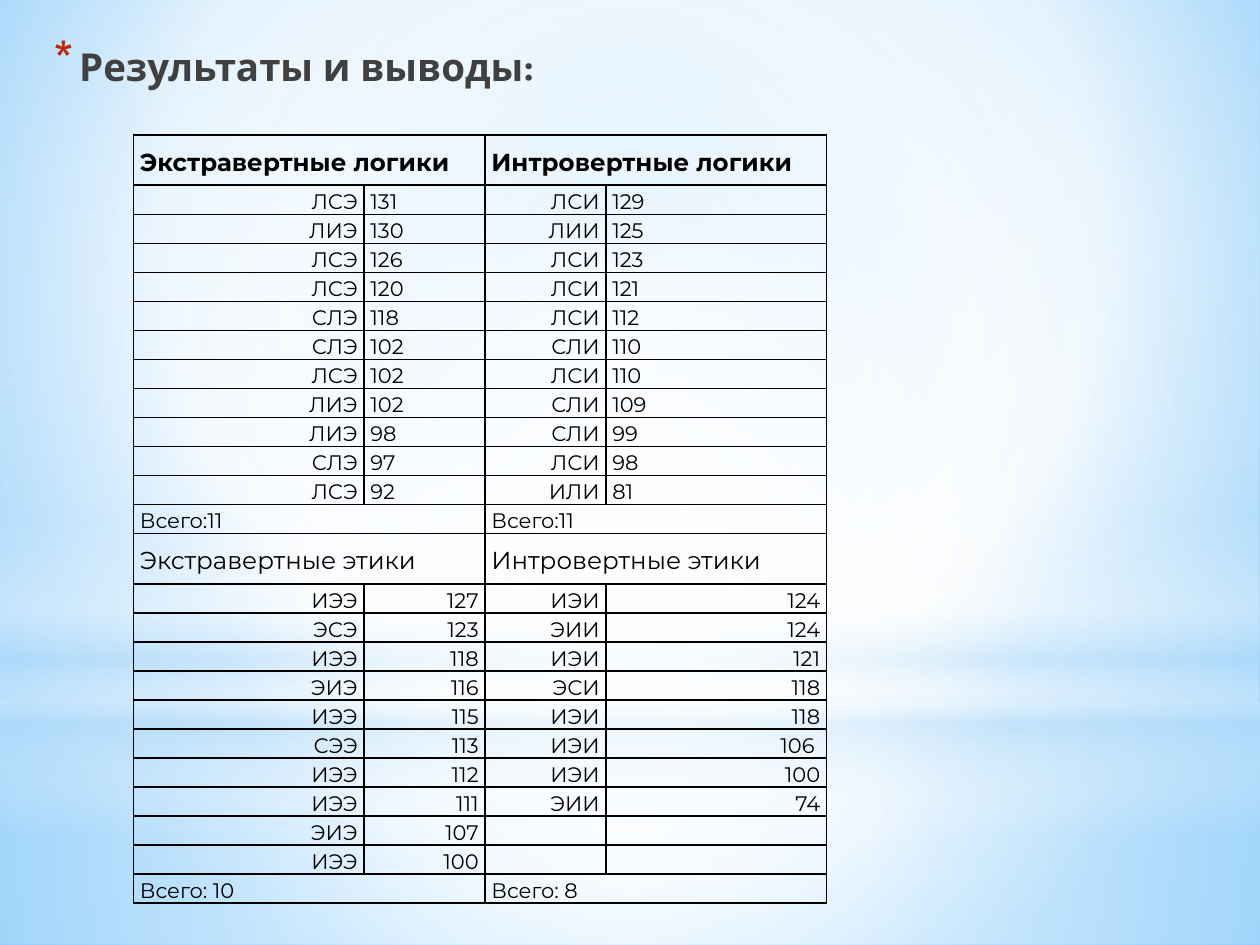
from lxml import etree
from pptx import Presentation
from pptx.dml.color import RGBColor
from pptx.enum.shapes import MSO_SHAPE
from pptx.enum.text import MSO_ANCHOR, PP_ALIGN
from pptx.oxml.ns import qn
from pptx.util import Inches, Pt

RECT, OVAL = MSO_SHAPE.RECTANGLE, MSO_SHAPE.OVAL
LEFT, RIGHT = PP_ALIGN.LEFT, PP_ALIGN.RIGHT
MIDDLE = MSO_ANCHOR.MIDDLE

BLACK = RGBColor(0x00, 0x00, 0x00)
GRAY = RGBColor(0x40, 0x40, 0x40)
RED = RGBColor(0xC3, 0x26, 0x0C)
WHITE = RGBColor(0xFF, 0xFF, 0xFF)
PALE = RGBColor(0xB4, 0xDC, 0xFA)
SKY = RGBColor(0x9E, 0xD5, 0xFF)
DEEP = RGBColor(0x5B, 0xB9, 0xFF)

# Content
TITLE = "Результаты и выводы:"
SECTIONS = [
    {
        "heads": ("Экстравертные логики", "Интровертные логики"),
        "bold": True,
        "number_align": LEFT,
        "rows": [
            ("ЛСЭ", "131", "ЛСИ", "129"), ("ЛИЭ", "130", "ЛИИ", "125"),
            ("ЛСЭ", "126", "ЛСИ", "123"), ("ЛСЭ", "120", "ЛСИ", "121"),
            ("СЛЭ", "118", "ЛСИ", "112"), ("СЛЭ", "102", "СЛИ", "110"),
            ("ЛСЭ", "102", "ЛСИ", "110"), ("ЛИЭ", "102", "СЛИ", "109"),
            ("ЛИЭ", "98", "СЛИ", "99"), ("СЛЭ", "97", "ЛСИ", "98"),
            ("ЛСЭ", "92", "ИЛИ", "81"),
        ],
        "totals": ("Всего:11", "Всего:11"),
    },
    {
        "heads": ("Экстравертные этики", "Интровертные этики"),
        "bold": False,
        "number_align": RIGHT,
        "rows": [
            ("ИЭЭ", "127", "ИЭИ", "124"), ("ЭСЭ", "123", "ЭИИ", "124"),
            ("ИЭЭ", "118", "ИЭИ", "121"), ("ЭИЭ", "116", "ЭСИ", "118"),
            ("ИЭЭ", "115", "ИЭИ", "118"), ("СЭЭ", "113", "ИЭИ", "106 "),
            ("ИЭЭ", "112", "ИЭИ", "100"), ("ИЭЭ", "111", "ЭИИ", "74"),
            ("ЭИЭ", "107", "", ""), ("ИЭЭ", "100", "", ""),
        ],
        "totals": ("Всего: 10", "Всего: 8"),
    },
]
COLUMNS = (1.83, 0.96, 0.96, 1.75)
HEAD_ROW, ROW = 0.4, 0.23

# Gradient stops: position, colour, opacity (all in percent)
CENTER = (50, 50, 50, 50)
BACKDROP = [(0, SKY, 100), (60, WHITE, 100), (100, DEEP, 100)]
LAYERS = [  # shape, top, height, stops, focus (None for a vertical gradient)
    (RECT, 5.58, 1.92, [(0, WHITE, 91), (37, WHITE, 76), (100, PALE, 79)], CENTER),
    (RECT, 0, 5.58, [(0, WHITE, 89), (48, WHITE, 62), (100, PALE, 79)], CENTER),
    (RECT, 4.12, 2.5, [(0, WHITE, 0), (29, WHITE, 30), (45, PALE, 40),
                       (55, WHITE, 26), (65, PALE, 60), (100, WHITE, 0)], None),
    (OVAL, 1.75, 5.58, [(0, WHITE, 100), (56, WHITE, 0)], CENTER),
]


def add(parent, tag, **attrs):
    return etree.SubElement(parent, qn(tag), {k: str(v) for k, v in attrs.items()})


def set_gradient(fill, owner, stops, focus):
    fill.gradient()
    grad = next(owner.iter(qn("a:gradFill")))
    for child in list(grad):
        grad.remove(child)
    stop_list = add(grad, "a:gsLst")
    for pos, color, opacity in stops:
        stop = add(stop_list, "a:gs", pos=pos * 1000)
        clr = add(stop, "a:srgbClr", val=color)
        if opacity < 100:
            add(clr, "a:alpha", val=opacity * 1000)
    if focus:
        sides = {side: pct * 1000 for side, pct in zip("ltrb", focus)}
        add(add(grad, "a:path", path="circle"), "a:fillToRect", **sides)
    else:
        add(grad, "a:lin", ang=90 * 60000, scaled=0)


def set_borders(cell):
    tc_pr = cell._tc.get_or_add_tcPr()
    for i, side in enumerate(("L", "R", "T", "B")):
        line = add(tc_pr, f"a:ln{side}", w=Pt(1))
        add(add(line, "a:solidFill"), "a:srgbClr", val=BLACK)
        tc_pr.insert(i, line)


def fill_cell(cell, text, align=LEFT, size=12, bold=False):
    cell.vertical_anchor = MIDDLE
    cell.margin_left = cell.margin_right = Inches(0.05)
    cell.margin_top = cell.margin_bottom = 0
    p = cell.text_frame.paragraphs[0]
    if text:
        p.add_run().text = text
    p.alignment, p.line_spacing = align, 1.15
    p.font.name, p.font.size, p.font.bold = "Montserrat", Pt(size), bold
    p.font.color.rgb = BLACK
    if not text:
        add(p._p, "a:endParaRPr", sz=size * 100)


def fill_pair(table, row, texts, **style):
    for col, text in zip((0, 2), texts):
        table.cell(row, col).merge(table.cell(row, col + 1))
        fill_cell(table.cell(row, col), text, **style)


prs = Presentation()
prs.slide_width, prs.slide_height = Inches(10), Inches(7.5)
s = prs.slides.add_slide(prs.slide_layouts[6])

# Background and its translucent layers
set_gradient(s.background.fill, s.element, BACKDROP, (20, 10, 20, 60))
for kind, top, height, stops, focus in LAYERS:
    sp = s.shapes.add_shape(kind, 0, Inches(top), prs.slide_width, Inches(height))
    sp.shadow.inherit = False
    sp.line.fill.background()
    set_gradient(sp.fill, sp.element, stops, focus)

# Bulleted title
tf = s.shapes.add_textbox(Inches(0.28), Inches(0.29), Inches(9.45), Inches(6.85)).text_frame
tf.word_wrap = True
p = tf.paragraphs[0]
p.text = TITLE
p.space_before, p.space_after = Pt(4.4), Pt(3)
p.font.name, p.font.size, p.font.bold = "Karla", Pt(22), True
p.font.color.rgb = GRAY
p_pr = p._p.get_or_add_pPr()
p_pr.set("marL", str(Inches(0.25)))
p_pr.set("indent", str(Inches(-0.2)))
bullet = [add(p_pr, "a:buClr"), add(p_pr, "a:buSzPct", val=130000),
          add(p_pr, "a:buChar", char="*")]
add(bullet[0], "a:srgbClr", val=RED)
p_pr.append(p_pr.find(qn("a:defRPr")))

# Results table
heights = [h for sec in SECTIONS for h in [HEAD_ROW] + [ROW] * (len(sec["rows"]) + 1)]
frame = s.shapes.add_table(len(heights), len(COLUMNS), Inches(1.06), Inches(1.07),
                           Inches(sum(COLUMNS)), Inches(sum(heights)))
table = frame.table
table.first_row = table.horz_banding = False
for column, width in zip(table.columns, COLUMNS):
    column.width = Inches(width)
for row, height in zip(table.rows, heights):
    row.height = Inches(height)
for cell in table.iter_cells():
    cell.fill.background()
    set_borders(cell)

row = 0
for sec in SECTIONS:
    fill_pair(table, row, sec["heads"], size=14, bold=sec["bold"])
    for row, texts in enumerate(sec["rows"], row + 1):
        for col, text in enumerate(texts):
            fill_cell(table.cell(row, col), text, sec["number_align"] if col % 2 else RIGHT)
    fill_pair(table, row + 1, sec["totals"])
    row += 2

prs.save("out.pptx")
